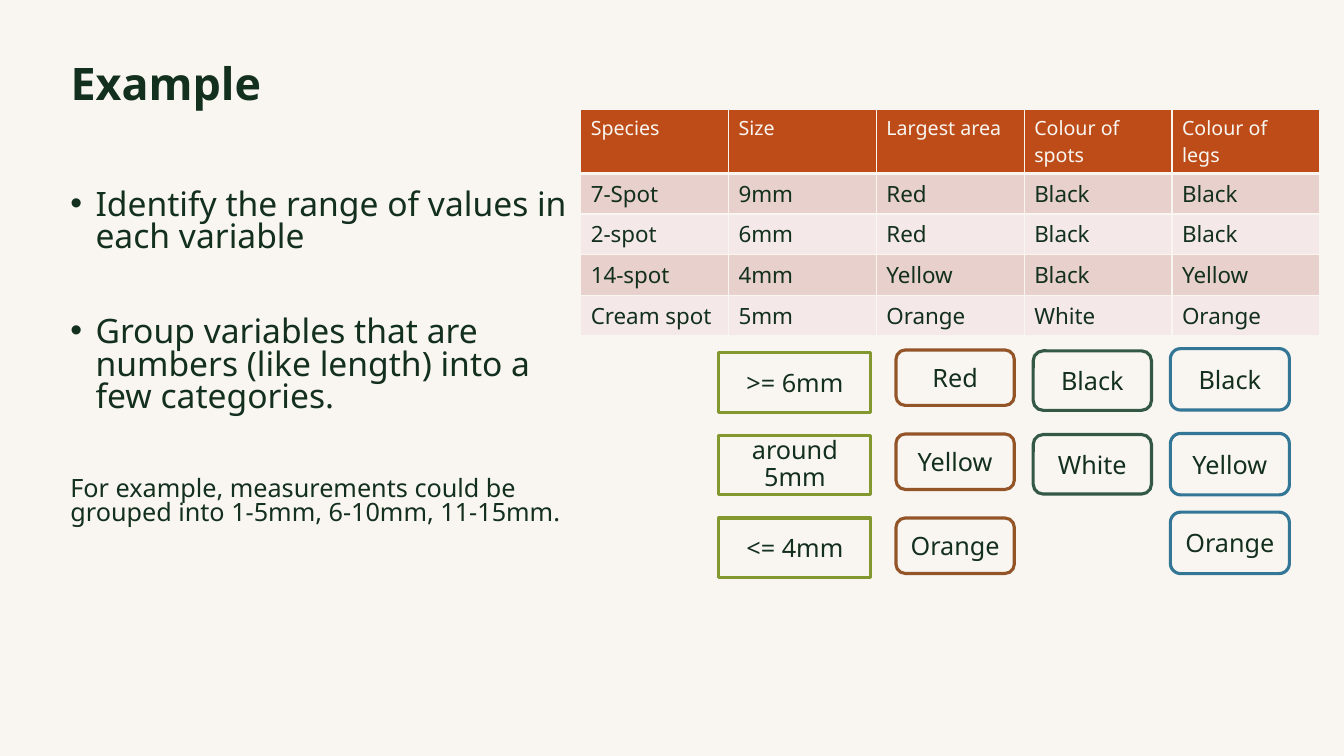
"""Build the ladybird example slide: a data table, category boxes and instructions."""
from dataclasses import dataclass

from lxml.etree import SubElement
from pptx import Presentation
from pptx.dml.color import RGBColor
from pptx.enum.shapes import MSO_SHAPE
from pptx.enum.text import MSO_ANCHOR, PP_ALIGN
from pptx.oxml.ns import qn
from pptx.util import Pt


@dataclass(frozen=True)
class Theme:
    font: str = "Noto Sans"
    paper: str = "F9F6F1"
    ink: str = "132F1D"
    header: str = "BD4C19"
    bands: tuple = ("E8D0CC", "F4E9E8")
    size_colour: str = "839930"
    area_colour: str = "935528"
    spots_colour: str = "335945"
    legs_colour: str = "337696"
    title: int = 32
    body: int = 24
    label: int = 18
    cell: int = 16
    heading: int = 14


theme = Theme()


def write(para, text, size, colour=theme.ink, bold=False, align=PP_ALIGN.LEFT, spacing=1.0, before=0):
    para.alignment = align
    para.line_spacing = spacing
    para.space_before = Pt(before)
    span = para.add_run()
    span.text = text
    span.font.name = theme.font
    span.font.size = Pt(size)
    span.font.bold = bold
    span.font.color.rgb = RGBColor.from_string(colour)


def add_border(cell, side, width):
    line = SubElement(cell._tc.get_or_add_tcPr(), qn(f"a:{side}"), w=str(Pt(width)))
    fill = SubElement(line, qn("a:solidFill"))
    SubElement(fill, qn("a:srgbClr"), val=theme.paper)


deck = Presentation()
deck.slide_width, deck.slide_height = Pt(960), Pt(540)
page = deck.slides.add_slide(deck.slide_layouts[5])
page.background.fill.solid()
page.background.fill.fore_color.rgb = RGBColor.from_string(theme.paper)

title = page.shapes.title
title.left, title.top, title.width, title.height = Pt(43.2), Pt(28.8), Pt(436), Pt(64.8)
title.text_frame.vertical_anchor = MSO_ANCHOR.MIDDLE
write(title.text_frame.paragraphs[0], "Example", theme.title, bold=True, spacing=0.9)

columns = [
    (MSO_SHAPE.RECTANGLE, theme.size_colour, 513.4, 108.7, 42.5,
     [(252, ">= 6mm"), (311, "around 5mm"), (370, "<= 4mm")]),
    (MSO_SHAPE.ROUNDED_RECTANGLE, theme.area_colour, 640, 84.5, 39.6,
     [(250, "Red"), (310, "Yellow"), (370, "Orange")]),
    (MSO_SHAPE.ROUNDED_RECTANGLE, theme.spots_colour, 738, 84.5, 42.5,
     [(250.6, "Black"), (310.4, "White")]),
    (MSO_SHAPE.ROUNDED_RECTANGLE, theme.legs_colour, 836, 85, 43.9,
     [(249, "Black"), (309.6, "Yellow"), (365.8, "Orange")]),
]
for outline, colour, left, width, height, categories in columns:
    for top, label in categories:
        box = page.shapes.add_shape(outline, Pt(left), Pt(top), Pt(width), Pt(height))
        box.shadow.inherit = False
        box.fill.solid()
        box.fill.fore_color.rgb = RGBColor.from_string(theme.paper)
        box.line.color.rgb = RGBColor.from_string(colour)
        box.line.width = Pt(2.25)
        box.text_frame.word_wrap = True
        box.text_frame.vertical_anchor = MSO_ANCHOR.MIDDLE
        write(box.text_frame.paragraphs[0], label, theme.label, align=PP_ALIGN.CENTER,
              spacing=0.88 if label == "around 5mm" else 1.0)

records = [
    ("Species", "Size", "Largest area", "Colour of spots", "Colour of legs"),
    ("7-Spot", "9mm", "Red", "Black", "Black"),
    ("2-spot", "6mm", "Red", "Black", "Black"),
    ("14-spot", "4mm", "Yellow", "Black", "Yellow"),
    ("Cream spot", "5mm", "Orange", "White", "Orange"),
]
table = page.shapes.add_table(5, 5, Pt(414.8), Pt(78.5), Pt(528), Pt(161)).table
for column in table.columns:
    column.width = Pt(105.6)
for index, record in enumerate(records):
    is_header = index == 0
    table.rows[index].height = Pt(45 if is_header else 29)
    for position, value in enumerate(record):
        cell = table.cell(index, position)
        for side in ("lnL", "lnR", "lnT", "lnB"):
            thick = (is_header and side == "lnB") or (index == 1 and side == "lnT")
            add_border(cell, side, 3 if thick else 1)
        cell.fill.solid()
        shade = theme.header if is_header else theme.bands[(index - 1) % 2]
        cell.fill.fore_color.rgb = RGBColor.from_string(shade)
        write(cell.text_frame.paragraphs[0], value, theme.heading if is_header else theme.cell,
              colour=theme.paper if is_header else theme.ink)

instructions = [
    ("Identify the range of values in each variable", theme.body, True),
    ("Group variables that are numbers (like length) into a few categories.", theme.body, True),
    ("For example, measurements could be grouped into 1-5mm, 6-10mm, 11-15mm.", theme.label, False),
]
body = page.shapes.add_textbox(Pt(43.2), Pt(132.5), Pt(371), Pt(292)).text_frame
body.word_wrap = True
for index, (text, size, bulleted) in enumerate(instructions):
    para = body.add_paragraph() if index else body.paragraphs[0]
    if bulleted:
        properties = para._p.get_or_add_pPr()
        properties.set("marL", str(Pt(18)))
        properties.set("indent", str(-Pt(18)))
        SubElement(properties, qn("a:buFont"), typeface="Arial")
        SubElement(properties, qn("a:buChar"), char="•")
    write(para, text, size, spacing=0.8, before=45 if index else 0)

deck.save("out.pptx")
